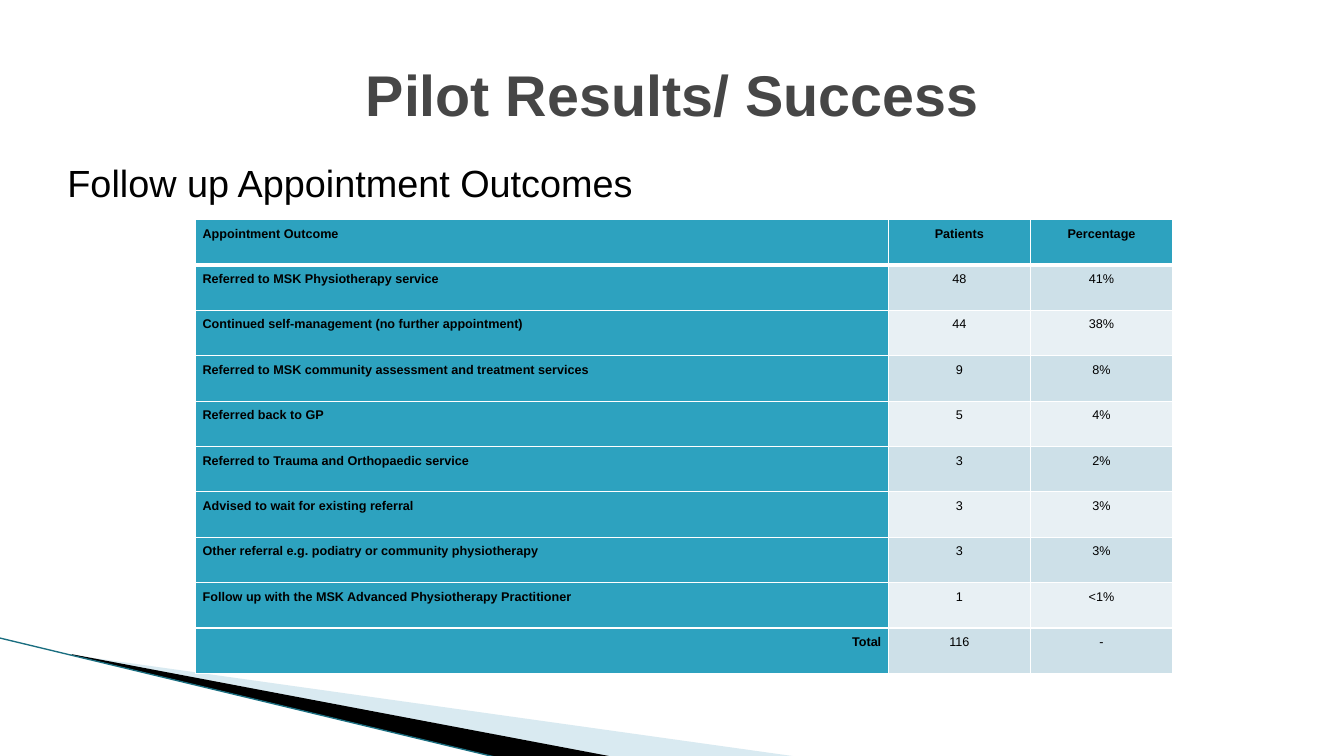
from lxml import etree
from pptx import Presentation
from pptx import util as u
from pptx.dml.color import RGBColor
from pptx.enum import shapes, text
from pptx.oxml import ns

HEADING = "Pilot Results/ Success"
SUBHEADING = "Follow up Appointment Outcomes"
OUTCOMES = [
    ("Appointment Outcome", "Patients", "Percentage"),
    ("Referred to MSK Physiotherapy service", "48", "41%"),
    ("Continued self-management (no further appointment)", "44", "38%"),
    ("Referred to MSK community assessment and treatment services", "9", "8%"),
    ("Referred back to GP", "5", "4%"),
    ("Referred to Trauma and Orthopaedic service", "3", "2%"),
    ("Advised to wait for existing referral", "3", "3%"),
    ("Other referral e.g. podiatry or community physiotherapy", "3", "3%"),
    ("Follow up with the MSK Advanced Physiotherapy Practitioner", "1", "<1%"),
    ("Total", "116", "-"),
]
COLUMN_WIDTHS = (687, 141, 141)
ROW_HEIGHT = 45
TEAL, BANDS = "2DA2BF", ("E8F0F4", "CDE0E8")
WEDGES = [
    ("A0CBDC", 40, [(73, 650), (793, 751), (608, 751)]),
    ("000000", 100, [(71, 649), (609, 751), (496, 752), (72, 650)]),
]
EDGE = ((0, 633), (495, 752))
EMU_PER_PX = 9144


def px(length):
    return u.Emu(length * EMU_PER_PX)


def color(hex_code):
    return RGBColor.from_string(hex_code)


def style(paragraph, size, hex_code, bold, align):
    paragraph.alignment = align
    font = paragraph.font
    font.name, font.size, font.bold = "Arial", u.Pt(size), bold
    font.color.rgb = color(hex_code)


def add_wedge(slide, hex_code, opacity, points):
    outline = slide.shapes.build_freeform(*points[0], scale=EMU_PER_PX)
    outline.add_line_segments(points[1:], close=True)
    wedge = outline.convert_to_shape()
    wedge.shadow.inherit = False
    wedge.line.fill.background()
    wedge.fill.solid()
    wedge.fill.fore_color.rgb = color(hex_code)
    if opacity < 100:
        tint = next(wedge.fill._xPr.iter(ns.qn("a:srgbClr")))
        etree.SubElement(tint, ns.qn("a:alpha"), val=str(opacity * 1000))


def add_label(slide, box, words, size, hex_code, bold, align, anchor):
    frame = slide.shapes.add_textbox(*map(px, box)).text_frame
    frame.word_wrap = True
    frame.vertical_anchor = anchor
    frame.text = words
    style(frame.paragraphs[0], size, hex_code, bold, align)


def add_borders(cell, bottom):
    properties = cell._tc.get_or_add_tcPr()
    widths = {"lnL": 1, "lnR": 1, "lnT": 1, "lnB": bottom}
    for position, (side, points) in enumerate(widths.items()):
        border = etree.Element(ns.qn(f"a:{side}"), w=str(u.Pt(points)))
        fill = etree.SubElement(border, ns.qn("a:solidFill"))
        etree.SubElement(fill, ns.qn("a:srgbClr"), val="FFFFFF")
        properties.insert(position, border)


def fill_cell(cell, row, column, words):
    heading = row == 0 or column == 0
    cell.fill.solid()
    cell.fill.fore_color.rgb = color(TEAL if heading else BANDS[row % 2])
    cell.margin_left = cell.margin_right = px(7)
    cell.margin_top = cell.margin_bottom = 0
    cell.text = words
    align = text.PP_ALIGN.CENTER
    if column == 0:
        align = text.PP_ALIGN.RIGHT if words == "Total" else text.PP_ALIGN.LEFT
    paragraph = cell.text_frame.paragraphs[0]
    style(paragraph, 9, "000000", heading, align)
    paragraph.line_spacing = 1.5
    paragraph.space_after = u.Pt(10)
    add_borders(cell, 3 if row == 0 else 1)


def main():
    deck = Presentation()
    deck.slide_width, deck.slide_height = px(1333), px(750)
    slide = deck.slides.add_slide(deck.slide_layouts[6])

    for wedge in WEDGES:
        add_wedge(slide, *wedge)
    (x1, y1), (x2, y2) = EDGE
    edge = slide.shapes.add_connector(
        shapes.MSO_CONNECTOR.STRAIGHT, px(x1), px(y1), px(x2), px(y2))
    edge.line.color.rgb = color("1A6E80")
    edge.line.width = u.Pt(0.95)
    etree.SubElement(edge._element.spPr, ns.qn("a:effectLst"))

    add_label(slide, (57, 154, 1188, 60), SUBHEADING, 27, "000000", False,
              text.PP_ALIGN.LEFT, text.MSO_ANCHOR.TOP)
    add_label(slide, (67, 30, 1200, 125), HEADING, 41, "464646", True,
              text.PP_ALIGN.CENTER, text.MSO_ANCHOR.MIDDLE)

    table = slide.shapes.add_table(
        len(OUTCOMES), len(COLUMN_WIDTHS), px(194), px(218),
        px(sum(COLUMN_WIDTHS)), px(ROW_HEIGHT * len(OUTCOMES))).table
    table.first_col = True
    for column, width in enumerate(COLUMN_WIDTHS):
        table.columns[column].width = px(width)
    for row, outcome in enumerate(OUTCOMES):
        table.rows[row].height = px(ROW_HEIGHT)
        for column, words in enumerate(outcome):
            fill_cell(table.cell(row, column), row, column, words)

    deck.save("out.pptx")


if __name__ == "__main__":
    main()
